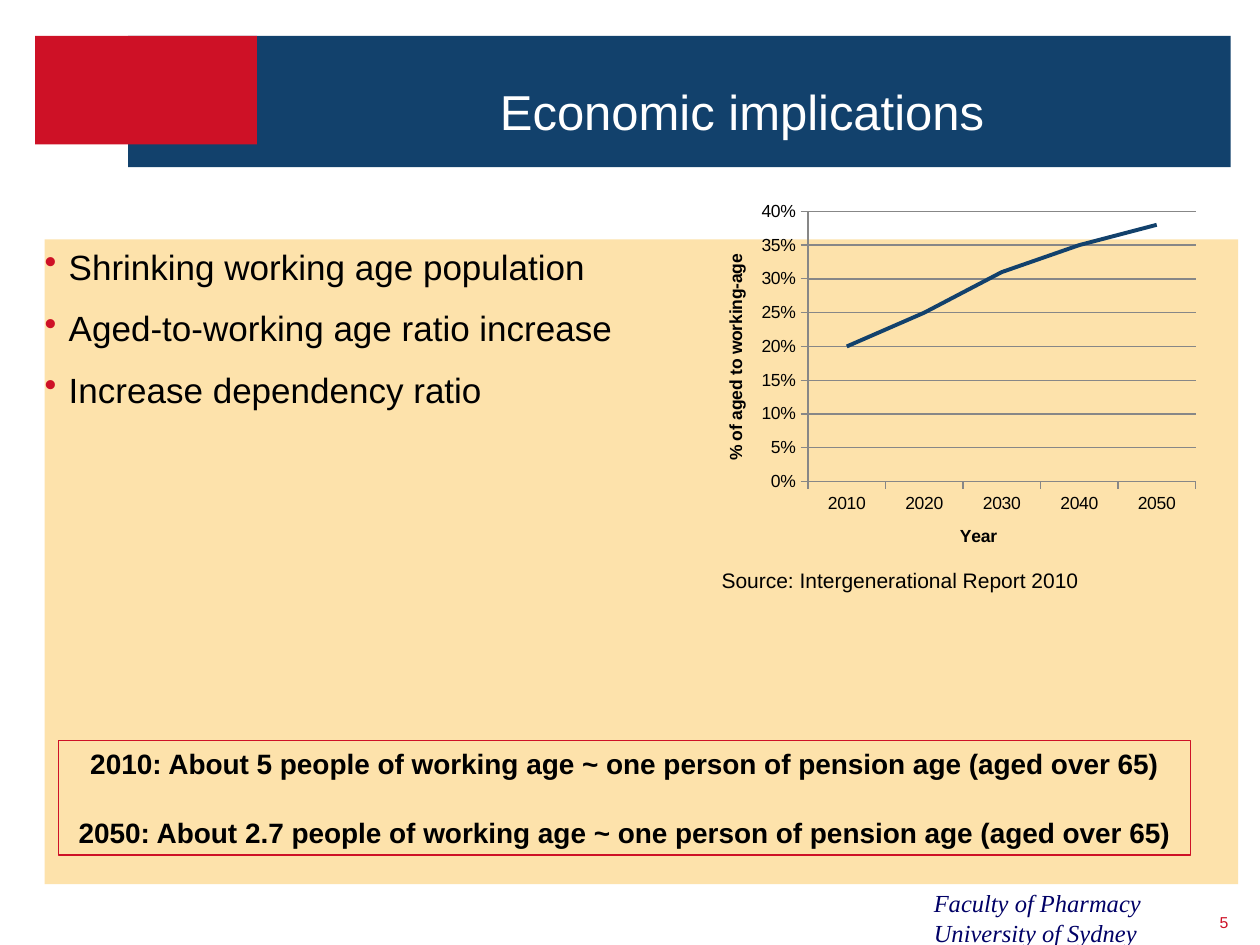
from dataclasses import dataclass

from lxml.etree import SubElement
from pptx import Presentation
from pptx.chart.data import CategoryChartData
from pptx.dml.color import RGBColor
from pptx.enum.chart import XL_CHART_TYPE, XL_TICK_MARK
from pptx.enum.shapes import MSO_SHAPE
from pptx.enum.text import MSO_ANCHOR, PP_ALIGN
from pptx.oxml import parse_xml
from pptx.oxml.ns import nsdecls, qn
from pptx.util import Pt

NAVY, RED, SAND, BLACK, WHITE = "12416C", "CE1126", "FDE2AB", "000000", "FFFFFF"
GRID_GREY, FOOTER_BLUE = "878787", "000066"


@dataclass(frozen=True)
class Box:
    left: float
    top: float
    width: float
    height: float

    def lengths(self):
        return Pt(self.left), Pt(self.top), Pt(self.width), Pt(self.height)


@dataclass(frozen=True)
class Panel:
    box: Box
    fill: str | None = None
    line: str | None = None


BODY = Panel(Box(25.5, 136.8, 682, 368.5), fill=SAND)
STATEMENT = Panel(Box(33.5, 423, 647, 65.5), line=RED)
BANNERS = [
    Panel(Box(73.25, 20.5, 630, 75), fill=NAVY),
    Panel(Box(20, 20.5, 126.75, 62), fill=RED),
]


def color(hex_string: str) -> RGBColor:
    return RGBColor.from_string(hex_string)


def add_panel(slide, panel: Panel):
    shape = slide.shapes.add_shape(MSO_SHAPE.RECTANGLE, *panel.box.lengths())
    shape.shadow.inherit = False
    if panel.fill:
        shape.fill.solid()
        shape.fill.fore_color.rgb = color(panel.fill)
    else:
        shape.fill.background()
    if panel.line:
        shape.line.color.rgb = color(panel.line)
        shape.line.width = Pt(0.75)
    else:
        shape.line.fill.background()
    return shape


def add_bullet(paragraph, indent: float) -> None:
    properties = paragraph._p.get_or_add_pPr()
    properties.set("marL", str(Pt(indent)))
    properties.set("indent", str(-Pt(indent)))
    bullet_color = SubElement(properties, qn("a:buClr"))
    SubElement(bullet_color, qn("a:srgbClr"), val=RED)
    SubElement(properties, qn("a:buChar"), char="•")


def write(shape, lines: list[str], *, size: float, font: str = "Arial",
          text_color: str = BLACK, bold: bool = False, italic: bool = False,
          align=PP_ALIGN.LEFT, anchor=MSO_ANCHOR.TOP, wrap: bool = True,
          margins=(7.2, 3.6, 7.2, 3.6), gap: float = 0,
          bullet_indent: float = 0) -> None:
    """Fill a shape with one paragraph per line, separated by gap points."""
    frame = shape.text_frame
    frame.word_wrap = wrap
    frame.vertical_anchor = anchor
    (frame.margin_left, frame.margin_top,
     frame.margin_right, frame.margin_bottom) = map(Pt, margins)
    for index, line in enumerate(lines):
        paragraph = frame.add_paragraph() if index else frame.paragraphs[0]
        paragraph.text = line
        paragraph.alignment = align
        if bullet_indent:
            add_bullet(paragraph, bullet_indent)
        if index and gap:
            paragraph.space_before = Pt(gap)
        paragraph.font.size = Pt(size)
        paragraph.font.name = font
        paragraph.font.bold = bold
        paragraph.font.italic = italic
        paragraph.font.color.rgb = color(text_color)


def add_text(slide, box: Box, lines: list[str], **text_format) -> None:
    write(slide.shapes.add_textbox(*box.lengths()), lines, **text_format)


def style_axis(axis, title: str) -> None:
    axis.major_tick_mark = XL_TICK_MARK.OUTSIDE
    axis.minor_tick_mark = XL_TICK_MARK.NONE
    axis.format.line.color.rgb = color(GRID_GREY)
    axis.format.line.width = Pt(0.75)
    axis.axis_title.text_frame.text = title
    font = axis.axis_title.text_frame.paragraphs[0].font
    font.size, font.bold, font.name = Pt(10), True, "Arial"
    font.color.rgb = color(BLACK)


def place_plot_area(chart, **fractions: float) -> None:
    """Fix the inner plot area as fractions of the chart frame."""
    plot_area = chart._chartSpace.chart.plotArea
    for layout in plot_area.findall(qn("c:layout")):
        plot_area.remove(layout)
    settings = "".join(f'<c:{name} val="{value}"/>' for name, value in fractions.items())
    plot_area.insert(0, parse_xml(
        f'<c:layout {nsdecls("c")}><c:manualLayout><c:layoutTarget val="inner"/>'
        f'<c:xMode val="edge"/><c:yMode val="edge"/>{settings}'
        '</c:manualLayout></c:layout>'))


def add_ratio_chart(slide, box: Box) -> None:
    data = CategoryChartData(number_format="0%")
    data.categories = ["2010", "2020", "2030", "2040", "2050"]
    data.add_series("Series 1", [0.2, 0.25, 0.31, 0.35, 0.38])
    chart = slide.shapes.add_chart(XL_CHART_TYPE.LINE, *box.lengths(), data).chart
    chart.has_legend = False
    chart.has_title = False
    chart.font.size, chart.font.name = Pt(10), "Arial"
    chart.font.color.rgb = color(BLACK)
    chart.plots[0].vary_by_categories = False

    style_axis(chart.category_axis, "Year")
    value_axis = chart.value_axis
    style_axis(value_axis, "% of aged to working-age")
    value_axis.minimum_scale, value_axis.maximum_scale = 0, 0.4
    value_axis.major_unit = 0.05
    value_axis.tick_labels.number_format = "0%"
    value_axis.tick_labels.number_format_is_linked = False
    value_axis.has_major_gridlines = True
    value_axis.major_gridlines.format.line.color.rgb = color(GRID_GREY)
    value_axis.major_gridlines.format.line.width = Pt(0.75)

    series = chart.plots[0].series[0]
    series.smooth = False
    series.format.line.color.rgb = color(NAVY)
    series.format.line.width = Pt(2.25)
    place_plot_area(chart, x=0.215, y=0.043, w=0.765, h=0.715)


def main() -> None:
    presentation = Presentation()
    presentation.slide_width, presentation.slide_height = Pt(720), Pt(540)
    slide = presentation.slides.add_slide(presentation.slide_layouts[6])

    for banner in BANNERS:
        add_panel(slide, banner)
    add_text(slide, Box(526.5, 504, 168, 41), ["Faculty of Pharmacy\vUniversity of Sydney"],
             size=14, font="Times New Roman", text_color=FOOTER_BLUE, italic=True)
    add_text(slide, Box(146, 34, 556, 49.5), ["Economic implications"], size=28,
             text_color=WHITE, align=PP_ALIGN.CENTER, anchor=MSO_ANCHOR.BOTTOM)
    write(add_panel(slide, BODY),
          ["Shrinking working age population",
           "Aged-to-working age ratio increase",
           "Increase dependency ratio"],
          size=20, margins=(0, 3.6, 7.2, 3.6), gap=11, bullet_indent=13.75)
    add_text(slide, Box(682.5, 518.5, 19.5, 16.5), ["5"], size=9, text_color=RED,
             align=PP_ALIGN.RIGHT, anchor=MSO_ANCHOR.MIDDLE, margins=(0, 0, 0, 0))
    write(add_panel(slide, STATEMENT),
          ["2010: About 5 people of working age ~ one person of pension age (aged over 65)",
           "2050: About 2.7 people of working age ~ one person of pension age (aged over 65)"],
          size=16, bold=True, align=PP_ALIGN.CENTER, wrap=False, gap=20)
    add_ratio_chart(slide, Box(399.5, 111.5, 289.5, 216))
    add_text(slide, Box(405.25, 321, 219.5, 21.75),
             ["Source: Intergenerational Report 2010"], size=12, wrap=False)

    presentation.save("out.pptx")


if __name__ == "__main__":
    main()
